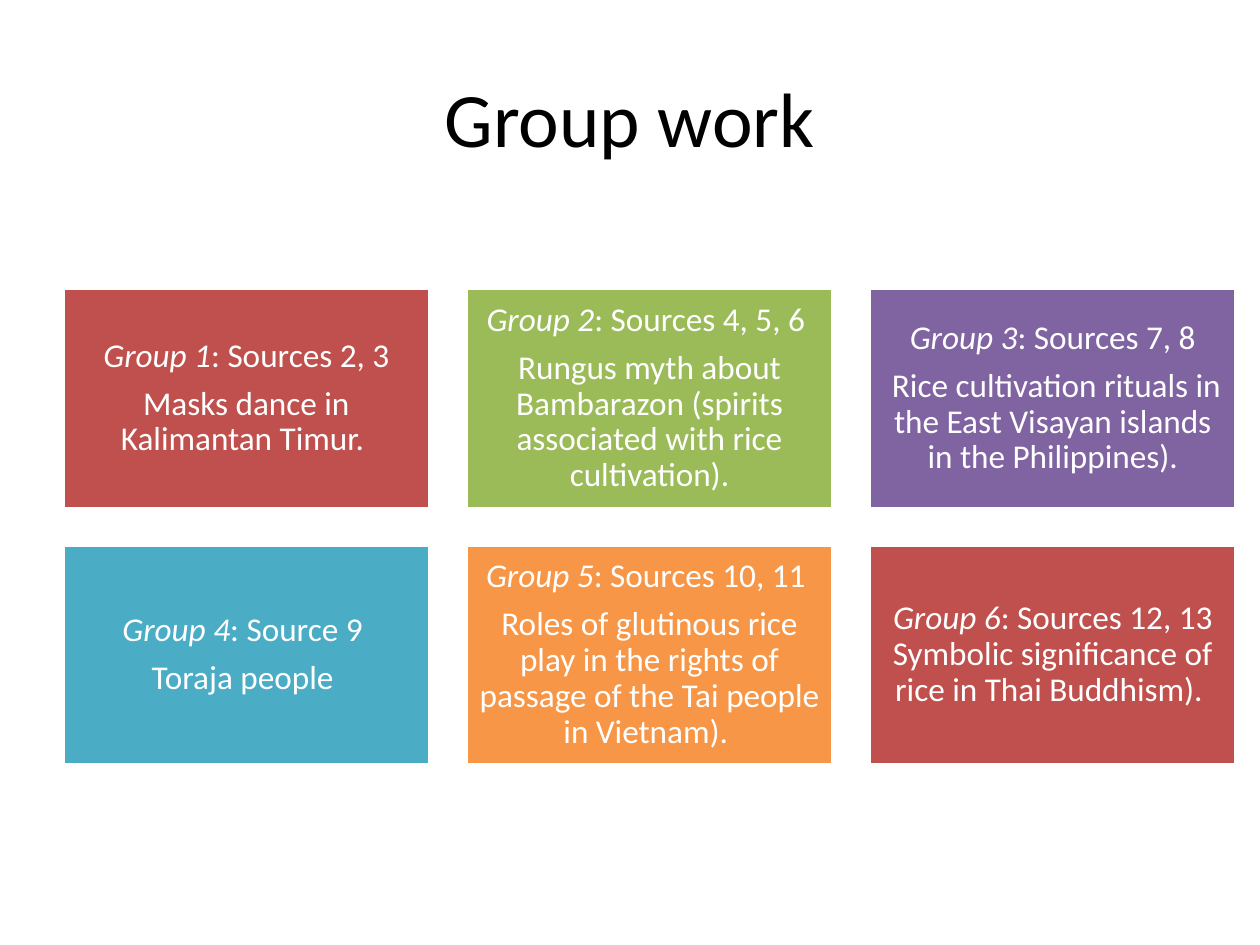
from pptx import Presentation
from pptx import util as u
from pptx.dml.color import RGBColor
from pptx.enum import shapes, text

COLOURS = {
    "red": "C0504D", "green": "9BBB59", "purple": "8064A2",
    "blue": "4BACC6", "orange": "F79646", "white": "FFFFFF", "black": "000000",
}
FONT = "Calibri"
COLUMNS = 3
GROUPS = [
    ("red", "Group 1", ": Sources 2, 3", "Masks dance in Kalimantan Timur. "),
    ("green", "Group 2", ": Sources 4, 5, 6 ",
     "Rungus myth about Bambarazon (spirits associated with rice cultivation)."),
    ("purple", "Group 3", ": Sources 7, 8",
     " Rice cultivation rituals in the East Visayan islands in the Philippines)."),
    ("blue", "Group 4", ": Source 9 ", "Toraja people "),
    ("orange", "Group 5", ": Sources 10, 11 ",
     "Roles of glutinous rice play in the rights of passage of the Tai people in Vietnam). "),
    ("red", "Group 6",
     ": Sources 12, 13 Symbolic significance of rice in Thai Buddhism). ", None),
]


def colour(name):
    return RGBColor.from_string(COLOURS[name])


def style_paragraph(para, size, ink):
    para.alignment = text.PP_ALIGN.CENTER
    para.font.name = FONT
    para.font.size = u.Pt(size)
    para.font.color.rgb = colour(ink)


def add_title(page, box, wording):
    frame = page.shapes.add_textbox(*map(u.Inches, box)).text_frame
    frame.word_wrap = True
    frame.vertical_anchor = text.MSO_ANCHOR.MIDDLE
    para = frame.paragraphs[0]
    para.text = wording
    style_paragraph(para, 44, "black")


def add_card(page, box, fill, name, sources, topic):
    card = page.shapes.add_shape(shapes.MSO_SHAPE.RECTANGLE, *map(u.Inches, box))
    card.shadow.inherit = False
    card.fill.solid()
    card.fill.fore_color.rgb = colour(fill)
    card.line.color.rgb = colour("white")
    card.line.width = u.Pt(2)
    frame = card.text_frame
    frame.word_wrap = True
    frame.vertical_anchor = text.MSO_ANCHOR.MIDDLE
    frame.margin_left = frame.margin_right = u.Inches(0.08)
    frame.margin_top = frame.margin_bottom = u.Inches(0.08)

    heading = frame.paragraphs[0]
    span = heading.add_run()
    span.text = name
    span.font.italic = True
    heading.add_run().text = sources
    if topic:
        frame.add_paragraph().text = topic
    for para in frame.paragraphs:
        style_paragraph(para, 19, "white")
        para.line_spacing = 0.9
        para.space_after = u.Pt(6.65)


def add_card_grid(page, box, groups, gap):
    left, top, width, height = box
    rows = -(-len(groups) // COLUMNS)
    card_width = (width - gap * (COLUMNS - 1)) / COLUMNS
    card_height = (height - gap * (rows - 1)) / rows
    for index, group in enumerate(groups):
        row, column = divmod(index, COLUMNS)
        cell = (left + column * (card_width + gap),
                top + row * (card_height + gap), card_width, card_height)
        add_card(page, cell, *group)


def main():
    deck = Presentation()
    deck.slide_width, deck.slide_height = u.Inches(10), u.Inches(7.5)
    page = deck.slides.add_slide(deck.slide_layouts[6])
    add_title(page, (0.5, 0.3, 9, 1.25), "Group work")
    add_card_grid(page, (0.5, 2.29, 9.31, 3.78), GROUPS, gap=0.29)
    deck.save("out.pptx")


if __name__ == "__main__":
    main()
